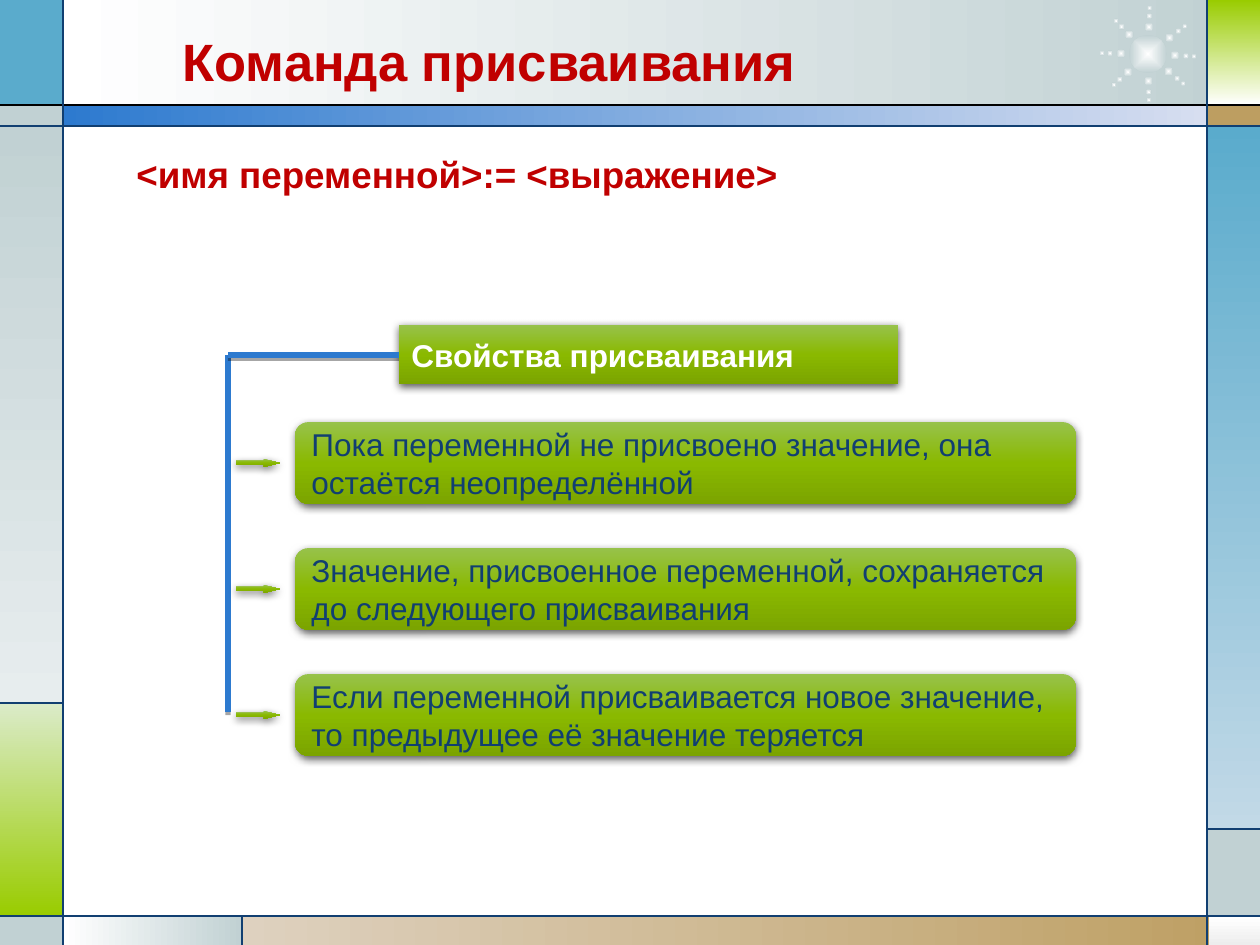
from math import cos, radians, sin

from lxml.etree import SubElement
from pptx import Presentation
from pptx.dml.color import RGBColor
from pptx.enum.shapes import MSO_CONNECTOR, MSO_SHAPE
from pptx.enum.text import MSO_ANCHOR, MSO_AUTO_SIZE, PP_ALIGN
from pptx.oxml.ns import qn
from pptx.util import Emu, Pt

SCALE = 914400 / 126
WIDTH, HEIGHT = 1260, 945
RED, WHITE, NAVY, BLUE = "C00000", "FFFFFF", "113F71", "2D7ACF"
GREY, SKY, LIME, TAN = "C1D1D3", "5AABCC", "99CC00", "BD9E61"
GLOSS = ("97C24B", "8AB900", "7BA400")
BOX_SHADOW = (63, 4.5, 1.5)
LINE_SHADOW = (35, 0, 1.8)


def px(n):
    return Emu(int(n * SCALE))


def rgb(value):
    return RGBColor.from_string(value)


def sub(parent, tag, **attrs):
    return SubElement(parent, qn(tag), {k: str(v) for k, v in attrs.items()})


class SlideBuilder:
    font = {"name": "Arial", "bold": False}

    def __init__(self, prs):
        self.s = prs.slides.add_slide(prs.slide_layouts[5])

    def gradient(self, sp, colours, angle):
        sp.fill.background()
        spPr = sp.fill._xPr
        old = spPr.find(qn("a:noFill"))
        grad = sub(spPr, "a:gradFill", rotWithShape=1)
        spPr.replace(old, grad)
        stops = sub(grad, "a:gsLst")
        for i, colour in enumerate(colours):
            stop = sub(stops, "a:gs", pos=100000 * i // (len(colours) - 1))
            sub(stop, "a:srgbClr", val=colour)
        if angle is None:
            path = sub(grad, "a:path", path="shape")
            sub(path, "a:fillToRect", l=50000, t=50000, r=50000, b=50000)
        else:
            sub(grad, "a:lin", ang=angle * 60000, scaled=0)

    def effect(self, sp, shadow):
        spPr = sp._element.spPr
        for old in spPr.findall(qn("a:effectLst")):
            spPr.remove(old)
        effects = sub(spPr, "a:effectLst")
        if shadow:
            alpha, blur, dist = shadow
            outer = sub(effects, "a:outerShdw", blurRad=Pt(blur), dist=Pt(dist),
                        dir=5400000, algn="ctr", rotWithShape=0)
            sub(sub(outer, "a:srgbClr", val="000000"), "a:alpha", val=alpha * 1000)

    def shape(self, x, y, w, h, colours, angle=90, kind=MSO_SHAPE.RECTANGLE,
              adj=(), shadow=None):
        sp = self.s.shapes.add_shape(kind, px(x), px(y), px(w), px(h))
        for i, value in enumerate(adj):
            sp.adjustments[i] = value
        if len(colours) == 1:
            sp.fill.solid()
            sp.fill.fore_color.rgb = rgb(colours[0])
        else:
            self.gradient(sp, colours, angle)
        sp.line.fill.background()
        self.effect(sp, shadow)
        return sp

    def line(self, x1, y1, x2, y2, colour=NAVY, width=0.75, shadow=None):
        c = self.s.shapes.add_connector(
            MSO_CONNECTOR.STRAIGHT, px(x1), px(y1), px(x2), px(y2))
        c.line.color.rgb = rgb(colour)
        c.line.width = Pt(width)
        self.effect(c, shadow)

    def text(self, sp, lines, colour, anchor=MSO_ANCHOR.MIDDLE, spacing=None,
             indent=0, **fmt):
        tf = sp.text_frame
        frame = {"word_wrap": True, "auto_size": MSO_AUTO_SIZE.NONE,
                 "vertical_anchor": anchor}
        for key, value in frame.items():
            setattr(tf, key, value)
        for i, words in enumerate(lines):
            p = tf.add_paragraph() if i else tf.paragraphs[0]
            p.alignment = PP_ALIGN.LEFT
            if spacing:
                p.line_spacing = spacing
            if indent:
                p._p.get_or_add_pPr().set("indent", str(px(indent)))
            r = p.add_run()
            r.text = words
            for key, value in {**self.font, **fmt}.items():
                setattr(r.font, key, value)
            r.font.color.rgb = rgb(colour)

    def title(self, x, y, w, h, words):
        sp = self.s.shapes.title
        box = {"left": x, "top": y, "width": w, "height": h}
        for key, value in box.items():
            setattr(sp, key, px(value))
        self.s.shapes._spTree.append(sp._element)
        self.text(sp, [words], RED, spacing=0.8, size=Pt(30), bold=True)

    def textbox(self, x, y, w, h, words):
        sp = self.s.shapes.add_textbox(px(x), px(y), px(w), px(h))
        self.text(sp, [words], RED, anchor=MSO_ANCHOR.TOP, indent=50,
                  size=Pt(21), bold=True)

    def star(self, cx, cy):
        def dot(x, y, d):
            self.shape(x - d / 2, y - d / 2, d, d, (WHITE, GREY), None, MSO_SHAPE.OVAL)

        dot(cx, cy, 38)
        for angle in (3, 40, 89, 138, 181, 226, 272, 323):
            for radius, d in ((38, 6), (46, 5), (27, 9)):
                dot(cx + radius * cos(radians(angle)),
                    cy + radius * sin(radians(angle)), d)

    def property_box(self, y, lines):
        sp = self.shape(295, y, 781, 82, GLOSS, kind=MSO_SHAPE.ROUNDED_RECTANGLE,
                        adj=(0.17,), shadow=BOX_SHADOW)
        self.text(sp, lines, NAVY, size=Pt(18))
        self.shape(236, y + 37, 44, 8, GLOSS, kind=MSO_SHAPE.RIGHT_ARROW,
                   adj=(0.5, 2.02), shadow=BOX_SHADOW)


def draw_frame(b):
    panels = (
        (63, 0, 1168, 105, (WHITE, GREY), 0),
        (0, 0, 63, 105, (SKY,), 0),
        (0, 105, 63, 21, (GREY,), 0),
        (0, 126, 63, 577, (GREY, "E7EDEE"), 90),
        (0, 703, 63, 213, ("DBEBC9", LIME), 90),
        (0, 916, 63, 29, (GREY,), 0),
        (63, 916, 179, 29, (WHITE, GREY), 0),
        (242, 916, 1018, 29, ("DED1BF", TAN), 0),
        (1209, 916, 51, 29, (WHITE, "EDEDED"), 90),
        (1208, 829, 52, 87, (GREY,), 0),
        (1207, 126, 53, 703, (SKY, "C2D9E7"), 90),
        (1207, 105, 53, 21, (TAN,), 0),
        (1208, 0, 52, 105, (LIME, WHITE), 90),
        (63, 105, 1145, 21, (BLUE, "D7DEF0"), 0),
    )
    for panel in panels:
        b.shape(*panel)
    b.star(1148, 54)
    b.line(0, 105, WIDTH, 105, "000000")
    for y in (126, 916):
        b.line(0, y, WIDTH, y)
    for x in (63, 1207):
        b.line(x, 0, x, HEIGHT)
    b.line(63, 703, 0, 703)
    b.line(242, 916, 242, HEIGHT)
    b.line(1207, 829, WIDTH, 829)


def main():
    prs = Presentation()
    prs.slide_width, prs.slide_height = px(WIDTH), px(HEIGHT)
    b = SlideBuilder(prs)
    draw_frame(b)
    b.title(170, 33, 827, 67, "Команда присваивания")
    b.textbox(74, 146, 871, 57, "<имя переменной>:= <выражение>")
    b.line(228, 712, 228, 355, BLUE, 3, LINE_SHADOW)
    heading = b.shape(399, 325, 499, 59, GLOSS, shadow=BOX_SHADOW)
    b.text(heading, ["Свойства присваивания"], WHITE, size=Pt(18), bold=True)
    b.line(399, 355, 228, 355, BLUE, 3, LINE_SHADOW)
    properties = (
        ("Пока переменной не присвоено значение, она", "остаётся неопределённой"),
        ("Значение, присвоенное переменной, сохраняется", "до следующего присваивания"),
        ("Если переменной присваивается новое значение,",
         "то предыдущее её значение теряется"),
    )
    for i, lines in enumerate(properties):
        b.property_box(422 + 126 * i, lines)
    prs.save("out.pptx")


if __name__ == "__main__":
    main()
